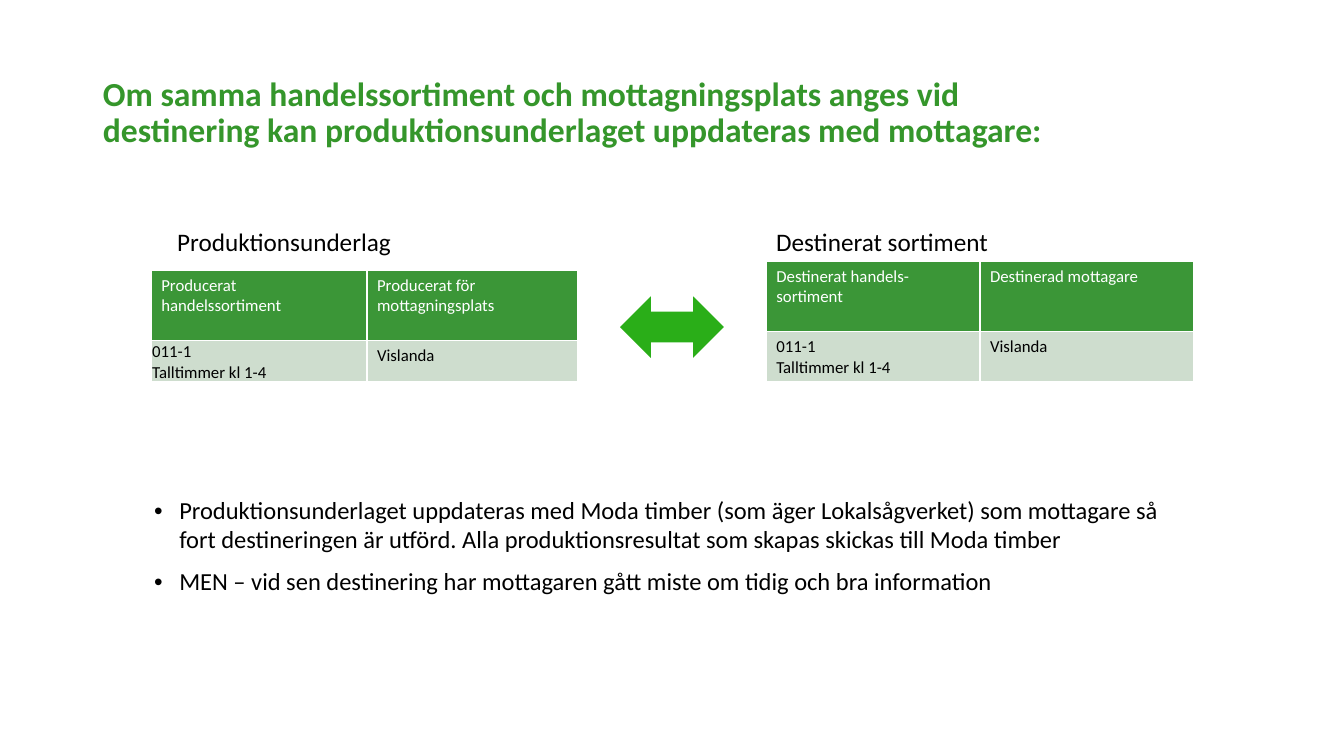
from lxml.etree import SubElement
from pptx import Presentation
from pptx.dml.color import RGBColor
from pptx.enum.shapes import MSO_SHAPE
from pptx.enum.text import MSO_ANCHOR, PP_ALIGN
from pptx.oxml.ns import qn
from pptx.util import Inches, Pt

TITLE = ("Om samma handelssortiment och mottagningsplats anges vid "
         "destinering kan produktionsunderlaget uppdateras med mottagare:")
NOTES = [
    "Produktionsunderlaget uppdateras med Moda timber (som äger Lokalsågverket) "
    "som mottagare så fort destineringen är utförd. Alla produktionsresultat "
    "som skapas skickas till Moda timber",
    "MEN – vid sen destinering har mottagaren gått miste om tidig och bra information",
]
GOODS = ["011-1", "Talltimmer kl 1-4"]
TABLES = [
    {"name": "Produktionsunderlag", "label": 1.66, "left": 1.5,
     "cols": (2.14, 2.09), "rows": (0.7, 0.41), "tight": True,
     "cells": [[["Producerat handelssortiment"], ["Producerat för mottagningsplats"]],
               [GOODS, ["Vislanda"]]]},
    {"name": "Destinerat sortiment", "label": 7.6, "left": 7.6,
     "cols": (2.12, 2.12), "rows": (0.7, 0.5), "tight": False,
     "cells": [[["Destinerat handels-", "sortiment"], ["Destinerad mottagare"]],
               [GOODS, ["Vislanda"]]]},
]
BASE = 3.79  # shared bottom edge of both tables
FONT = "Calibri"
GREEN = RGBColor(0x35, 0x96, 0x2B)
HEAD = RGBColor(0x3B, 0x96, 0x37)
PALE = RGBColor(0xCE, 0xDD, 0xCE)
ARROW = RGBColor(0x2A, 0xAE, 0x18)
WHITE = RGBColor(0xFF, 0xFF, 0xFF)
BLACK = RGBColor(0, 0, 0)


def write(frame, lines, size, color=BLACK, bold=False, space=None, before=0, bullet=False):
    frame.word_wrap = True
    for i, line in enumerate(lines):
        para = frame.paragraphs[0] if i == 0 else frame.add_paragraph()
        para.alignment = PP_ALIGN.LEFT
        para.space_before = Pt(before)
        if space:
            para.line_spacing = space
        run = para.add_run()
        run.text = line
        font = run.font
        font.name, font.size, font.bold = FONT, Pt(size), bold
        font.color.rgb = color
        if bullet:
            props = para._p.get_or_add_pPr()
            props.set("marL", str(Inches(0.25)))
            props.set("indent", str(-Inches(0.25)))
            SubElement(props, qn("a:buFont")).set("typeface", "Arial")
            SubElement(props, qn("a:buChar")).set("char", "•")


def box(slide, *place):
    return slide.shapes.add_textbox(*map(Inches, place)).text_frame


def draw_table(slide, data):
    cols, rows = data["cols"], data["rows"]
    high = sum(rows)
    place = (data["left"], BASE - high, sum(cols), high)
    table = slide.shapes.add_table(len(rows), len(cols), *map(Inches, place)).table
    table.first_row = table.horz_banding = False
    for col, width in zip(table.columns, cols):
        col.width = Inches(width)
    for r, height in enumerate(rows):
        table.rows[r].height = Inches(height)
        for c, lines in enumerate(data["cells"][r]):
            cell = table.cell(r, c)
            cell.fill.solid()
            cell.fill.fore_color.rgb = PALE if r else HEAD
            if data["tight"] and (r, c) == (1, 0):
                cell.margin_left = cell.margin_right = cell.margin_top = Inches(0.01)
                cell.margin_bottom = 0
            write(cell.text_frame, lines, 12, color=BLACK if r else WHITE)


def main():
    deck = Presentation()
    deck.slide_width, deck.slide_height = Inches(13.33), Inches(7.5)
    slide = deck.slides.add_slide(deck.slide_layouts[5])

    title = slide.shapes.title
    title.left, title.top, title.width, title.height = map(Inches, (0.92, 0.4, 10.1, 1.45))
    title.text_frame.vertical_anchor = MSO_ANCHOR.MIDDLE
    write(title.text_frame, [TITLE], 24, color=GREEN, bold=True, space=0.9)

    write(box(slide, 1.43, 4.88, 10.48, 1.34), NOTES, 17.5,
          space=0.97, before=10, bullet=True)

    for data in TABLES:
        draw_table(slide, data)
        write(box(slide, data["label"], 2.2, 3.56, 0.4), [data["name"]], 18)

    arrow = slide.shapes.add_shape(MSO_SHAPE.LEFT_RIGHT_ARROW,
                                   *map(Inches, (6.15, 2.94, 1.03, 0.61)))
    arrow.shadow.inherit = False
    arrow.fill.solid()
    arrow.fill.fore_color.rgb = ARROW
    arrow.line.fill.background()

    deck.save("out.pptx")


if __name__ == "__main__":
    main()
